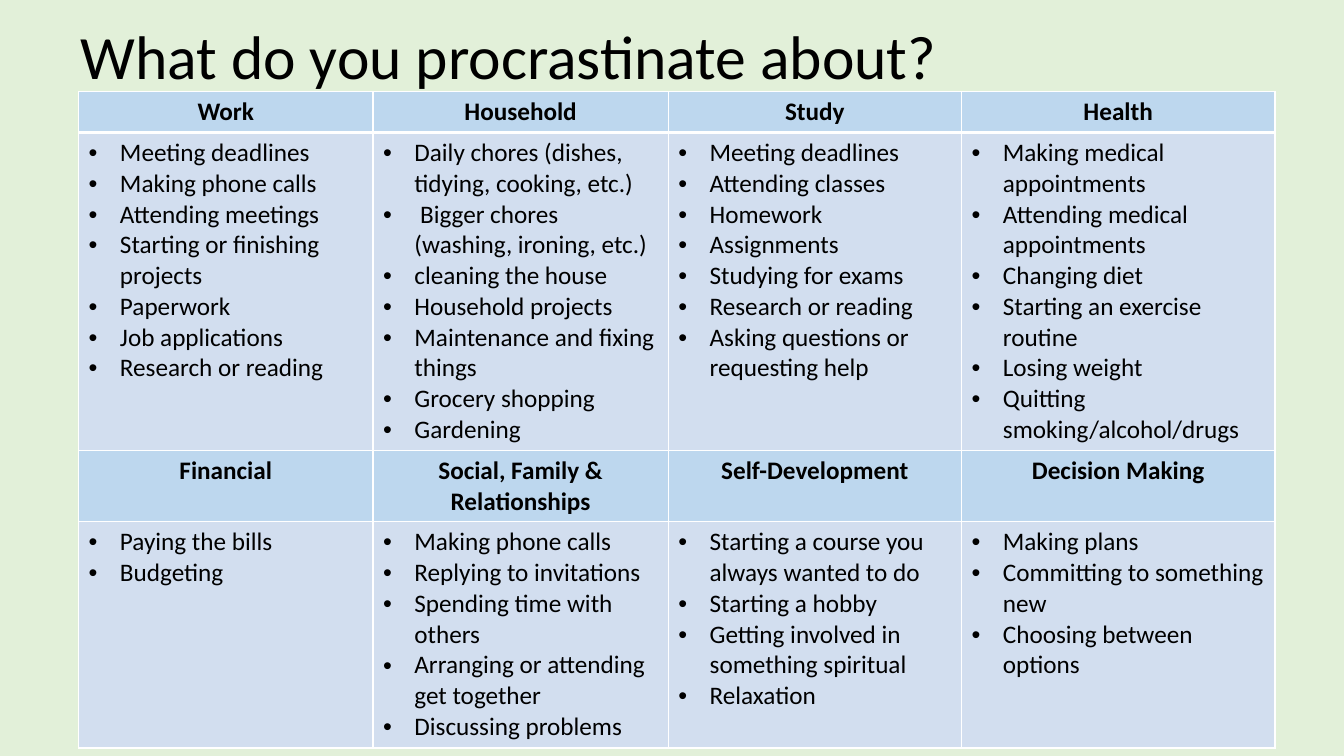
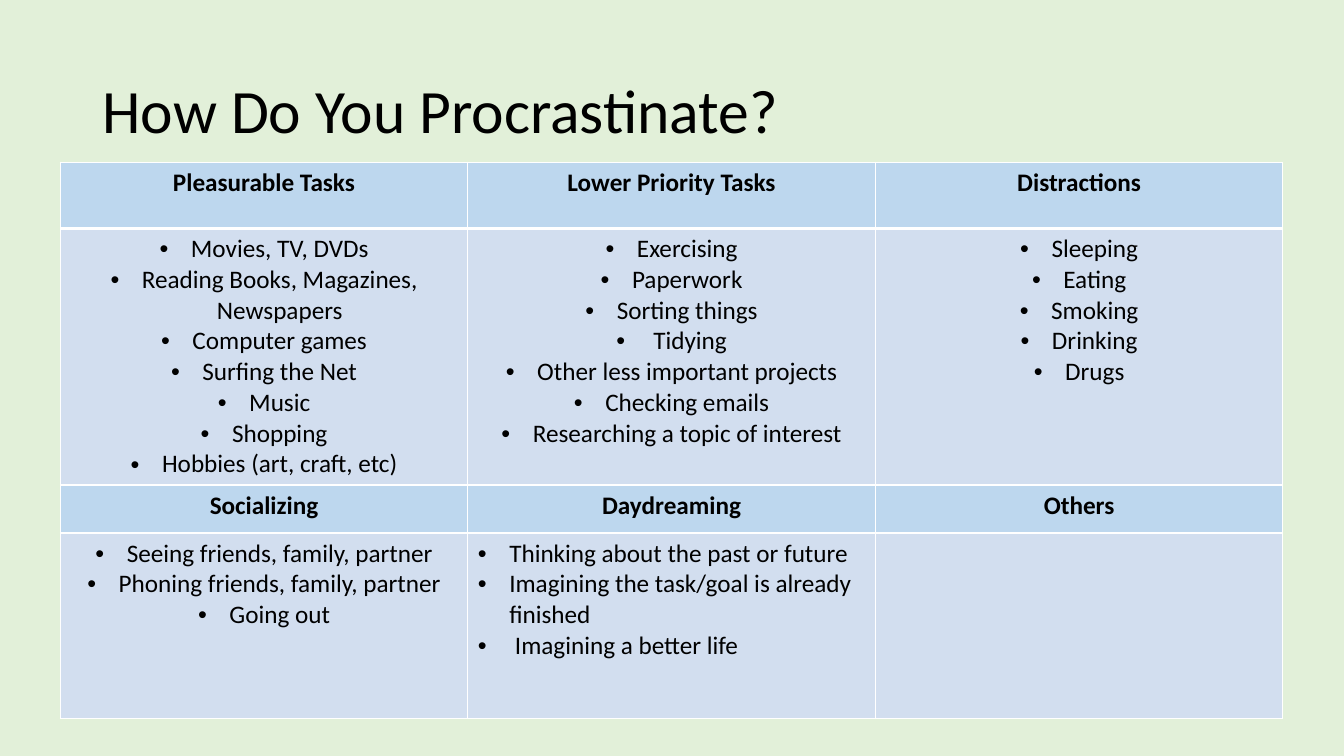
import pptx
import pptx.dml.color
import pptx.enum.text
import pptx.oxml.ns
import pptx.util
from lxml import etree

Cm, Pt = pptx.util.Cm, pptx.util.Pt
ALIGN, ANCHOR = pptx.enum.text.PP_ALIGN, pptx.enum.text.MSO_ANCHOR

FONT = "Calibri"
BACKGROUND, HEADING_FILL, LIST_FILL = "E2F0D9", "BDD7EE", "D2DEEF"
TEXT, BORDER = "000000", "FFFFFF"
TITLE_SIZE = (Cm(29.21), Cm(3.68))
BULLET_INDENT = Cm(0.79)

# Each group is a row of headings with the list under each heading.
# Lists under the headings in "left_aligned" start at the left; others are centred.
SLIDES = [
    {
        "title": "What do you procrastinate about?",
        "title_at": (1.78, 0.53),
        "title_anchor": ANCHOR.TOP,
        "table_at": (1.98, 2.31),
        "columns": [7.42, 7.44, 7.39, 7.9],
        "rows": [1.02, 8, 1.8, 5.7],
        "left_aligned": {"Work", "Household", "Study", "Health", "Financial",
                         "Social, Family & Relationships",
                         "Self-Development", "Decision Making"},
        "groups": [
            {
                "Work": ["Meeting deadlines", "Making phone calls",
                         "Attending meetings", "Starting or finishing projects",
                         "Paperwork", "Job applications", "Research or reading"],
                "Household": ["Daily chores (dishes, tidying, cooking, etc.)",
                              " Bigger chores (washing, ironing, etc.)",
                              "cleaning the house", "Household projects",
                              "Maintenance and fixing things",
                              "Grocery shopping", "Gardening"],
                "Study": ["Meeting deadlines", "Attending classes", "Homework",
                          "Assignments", "Studying for exams",
                          "Research or reading",
                          "Asking questions or requesting help"],
                "Health": ["Making medical appointments",
                           "Attending medical appointments", "Changing diet",
                           "Starting an exercise routine", "Losing weight",
                           "Quitting smoking/alcohol/drugs"],
            },
            {
                "Financial": ["Paying the bills", "Budgeting"],
                "Social, Family & Relationships": [
                    "Making phone calls", "Replying to invitations",
                    "Spending time with others",
                    "Arranging or attending get together",
                    "Discussing problems"],
                "Self-Development": ["Starting a course you always wanted to do",
                                     "Starting a hobby",
                                     "Getting involved in something spiritual",
                                     "Relaxation"],
                "Decision Making": ["Making plans", "Committing to something new",
                                    "Choosing between options"],
            },
        ],
    },
    {
        "title": "How Do You Procrastinate?",
        "title_at": (2.33, 1.01),
        "title_anchor": ANCHOR.MIDDLE,
        "table_at": (1.52, 4.09),
        "columns": [10.27] * 3,
        "rows": [1.67, 6.46, 1.21, 4.68],
        "left_aligned": {"Daydreaming"},
        "groups": [
            {
                "Pleasurable Tasks": ["Movies, TV, DVDs",
                                      "Reading Books, Magazines, Newspapers",
                                      "Computer games", "Surfing the Net",
                                      "Music", "Shopping",
                                      "Hobbies (art, craft, etc)"],
                "Lower Priority Tasks": ["Exercising", "Paperwork",
                                         "Sorting things", " Tidying",
                                         "Other less important projects",
                                         "Checking emails",
                                         "Researching a topic of interest"],
                "Distractions": ["Sleeping", "Eating", "Smoking", "Drinking",
                                 "Drugs"],
            },
            {
                "Socializing": ["Seeing friends, family, partner",
                                "Phoning friends, family, partner", "Going out"],
                "Daydreaming": ["Thinking about the past or future",
                                "Imagining the task/goal is already finished",
                                " Imagining a better life"],
                "Others": [],
            },
        ],
    },
]


def set_fill(fill, colour):
    fill.solid()
    fill.fore_color.rgb = pptx.dml.color.RGBColor.from_string(colour)


def add_run(paragraph, text, size, bold=False):
    run = paragraph.add_run()
    run.text = text
    run.font.name, run.font.size, run.font.bold = FONT, Pt(size), bold
    run.font.color.rgb = pptx.dml.color.RGBColor.from_string(TEXT)


def add_child(parent, tag, **attributes):
    return etree.SubElement(parent, pptx.oxml.ns.qn(tag), attributes)


def add_bullet(paragraph):
    properties = paragraph._p.get_or_add_pPr()
    properties.set("marL", str(int(BULLET_INDENT)))
    properties.set("indent", str(-int(BULLET_INDENT)))
    add_child(properties, "a:buFont", typeface="Arial")
    add_child(properties, "a:buChar", char="•")


def style_cell(cell, row, colour):
    """Fill and outline a cell; the line under the first row is thicker."""
    widths = {"L": 1, "R": 1, "T": 3 if row == 1 else 1, "B": 3 if row == 0 else 1}
    properties = cell._tc.get_or_add_tcPr()
    for side, width in widths.items():
        line = add_child(properties, f"a:ln{side}", w=str(int(Pt(width))))
        add_child(add_child(line, "a:solidFill"), "a:srgbClr", val=BORDER)
    set_fill(cell.fill, colour)


def write_lines(cell, lines, alignment, heading=False):
    for number, line in enumerate(lines):
        frame = cell.text_frame
        paragraph = frame.add_paragraph() if number else frame.paragraphs[0]
        paragraph.alignment = alignment
        if not heading:
            add_bullet(paragraph)
        add_run(paragraph, line, 18, bold=heading)


def add_title(slide, content):
    title = slide.shapes.title
    title.left, title.top = map(Cm, content["title_at"])
    title.width, title.height = TITLE_SIZE
    frame = title.text_frame
    frame.auto_size = pptx.enum.text.MSO_AUTO_SIZE.NONE
    frame.vertical_anchor = content["title_anchor"]
    paragraph = frame.paragraphs[0]
    paragraph.alignment, paragraph.line_spacing = ALIGN.LEFT, 0.9
    add_run(paragraph, content["title"], 44)


def add_task_table(slide, content):
    columns, rows = content["columns"], content["rows"]
    left, top = map(Cm, content["table_at"])
    table = slide.shapes.add_table(len(rows), len(columns), left, top,
                                   Cm(sum(columns)), Cm(sum(rows))).table
    table.horz_banding = False
    for column, width in zip(table.columns, columns):
        column.width = Cm(width)
    for row, height in zip(table.rows, rows):
        row.height = Cm(height)
    for group_number, group in enumerate(content["groups"]):
        heading_row = 2 * group_number
        for column, (heading, tasks) in enumerate(group.items()):
            heading_cell = table.cell(heading_row, column)
            style_cell(heading_cell, heading_row, HEADING_FILL)
            write_lines(heading_cell, [heading], ALIGN.CENTER, heading=True)
            task_cell = table.cell(heading_row + 1, column)
            style_cell(task_cell, heading_row + 1, LIST_FILL)
            left_aligned = heading in content["left_aligned"]
            write_lines(task_cell, tasks, ALIGN.LEFT if left_aligned else ALIGN.CENTER)


def main():
    deck = pptx.Presentation()
    deck.slide_width, deck.slide_height = Cm(33.87), Cm(19.05)
    set_fill(deck.slide_master.background.fill, BACKGROUND)
    title_only = deck.slide_layouts.get_by_name("Title Only")
    for content in SLIDES:
        slide = deck.slides.add_slide(title_only)
        add_title(slide, content)
        add_task_table(slide, content)
    deck.save("out.pptx")


if __name__ == "__main__":
    main()
